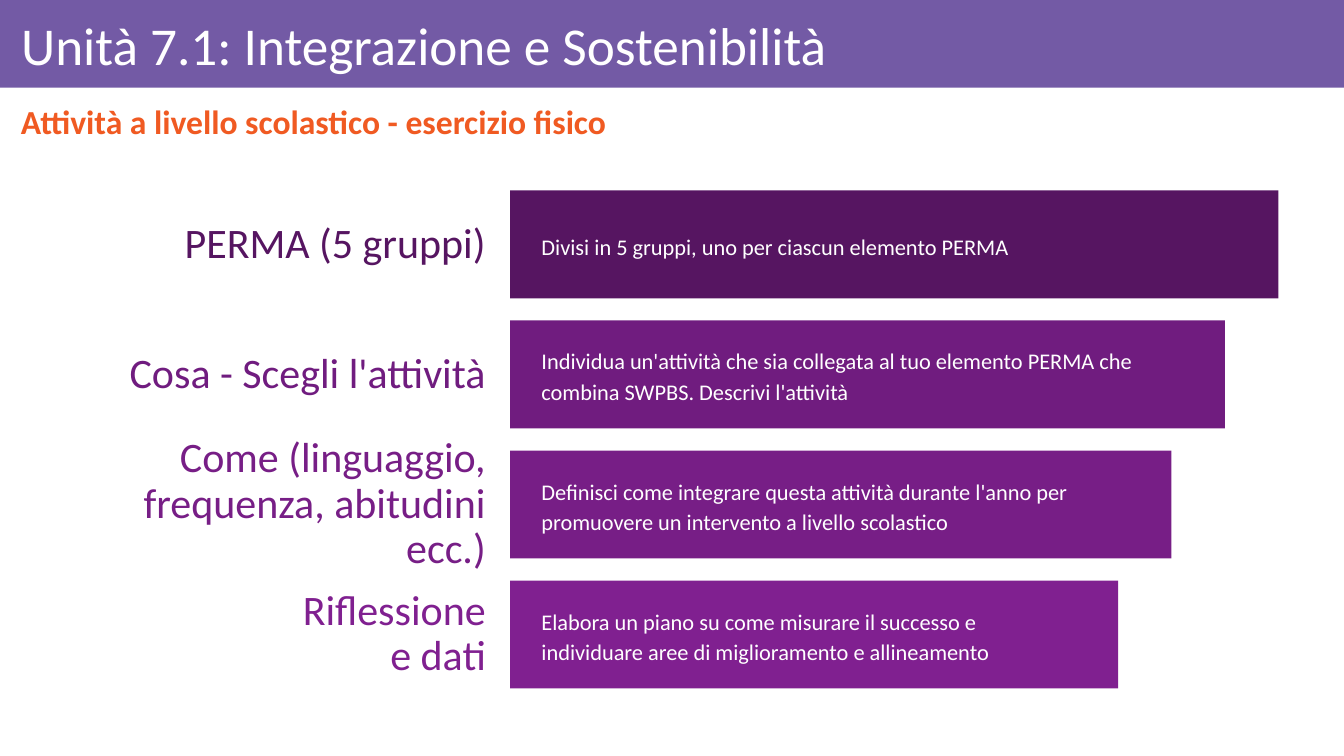
from pptx import Presentation
from pptx import util as u
from pptx.dml.color import RGBColor
from pptx.enum import shapes, text

# Content
TITLE = "Unità 7.1: Integrazione e Sostenibilità"
HEAD = "Attività a livello scolastico - esercizio fisico"
# label, label width, detail, detail width, detail height, colour
STEPS = [
    ("PERMA (5 gruppi)", 3.96,
     "Divisi in 5 gruppi, uno per ciascun elemento PERMA", 6.95, 0.84, "561561"),
    ("Cosa - Scegli l'attività", 5.3,
     "Individua un'attività che sia collegata al tuo elemento PERMA che "
     "combina SWPBS. Descrivi l'attività", 6.38, 0.48, "701C7F"),
    ("Come (linguaggio, frequenza, abitudini ecc.)", 4.03,
     "Definisci come integrare questa attività durante l'anno per "
     "promuovere un intervento a livello scolastico", 5.61, 0.48, "771E86"),
    ("Riflessione e dati", 2.23,
     "Elabora un piano su come misurare il successo e "
     "individuare aree di miglioramento e allineamento", 5.61, 0.48, "802090"),
]


class Theme:
    font = "Calibri"
    white, band, accent = "FFFFFF", "735AA5", "F05A22"
    title, head, label, detail = 38, 24, 30, 16


# Row geometry in inches
TOP, PITCH, BAR_H = 1.89, 1.29, 1.07
BAR_X, BAR_W, SHRINK = 5.06, 7.62, 0.53
LABEL_END, LABEL_H, DETAIL_X = 4.95, 0.92, 5.24
INSET = (0.13, 0.07, 0.13, 0.07)
LEFT, RIGHT, JUST = text.PP_ALIGN.LEFT, text.PP_ALIGN.RIGHT, text.PP_ALIGN.JUSTIFY


def block(host, x, y, w, h, color):
    box = host.add_shape(shapes.MSO_SHAPE.RECTANGLE, *map(u.Inches, (x, y, w, h)))
    box.shadow.inherit = False
    box.fill.solid()
    box.fill.fore_color.rgb = RGBColor.from_string(color)
    box.line.fill.background()


def write(box, words, size, color, inset, align=LEFT, lead=0.9, bold=False):
    frame = box.text_frame
    frame.word_wrap = True
    frame.auto_size = text.MSO_AUTO_SIZE.NONE
    frame.vertical_anchor = text.MSO_ANCHOR.MIDDLE
    (frame.margin_left, frame.margin_top,
     frame.margin_right, frame.margin_bottom) = map(u.Inches, inset)
    para = frame.paragraphs[0]
    para.alignment, para.line_spacing = align, lead
    para.space_before = u.Pt(0)
    run = para.add_run()
    run.text = words
    font = run.font
    font.name, font.size, font.bold = Theme.font, u.Pt(size), bold
    font.color.rgb = RGBColor.from_string(color)


def label(host, x, y, w, h, *args, **style):
    write(host.add_textbox(*map(u.Inches, (x, y, w, h))), *args, **style)


def main():
    deck = Presentation()
    deck.slide_width, deck.slide_height = u.Inches(13.33), u.Inches(7.5)
    slide = deck.slides.add_slide(deck.slide_layouts[5])
    parts = slide.shapes

    # Title on its band
    block(parts, 0, 0, 13.33, 0.87, Theme.band)
    title = parts.title
    title.left, title.top, title.width, title.height = map(
        u.Inches, (0.11, 0.09, 13.06, 0.78))
    write(title, TITLE, Theme.title, Theme.white, (0.1, 0.06, 0.06, 0.06))
    parts._spTree.append(title._element)  # bring in front of the band

    # Subtitle
    label(parts, 0.11, 0.93, 13.06, 0.6, HEAD, Theme.head, Theme.accent,
          (0.1, 0.05, 0.1, 0.05), align=JUST, bold=True)

    # Steps: label, shrinking bar, detail, all centred on one line
    for i, (name, name_w, detail, text_w, text_h, color) in enumerate(STEPS):
        row = parts.add_group_shape().shapes
        top = TOP + i * PITCH
        mid = top + BAR_H / 2
        label(row, LABEL_END - name_w, mid - LABEL_H / 2, name_w, LABEL_H,
              name, Theme.label, color, INSET, align=RIGHT)
        block(row, BAR_X, top, BAR_W - i * SHRINK, BAR_H, color)
        label(row, DETAIL_X, mid - text_h / 2, text_w, text_h,
              detail, Theme.detail, Theme.white, INSET, lead=1.15)

    deck.save("out.pptx")


if __name__ == "__main__":
    main()
